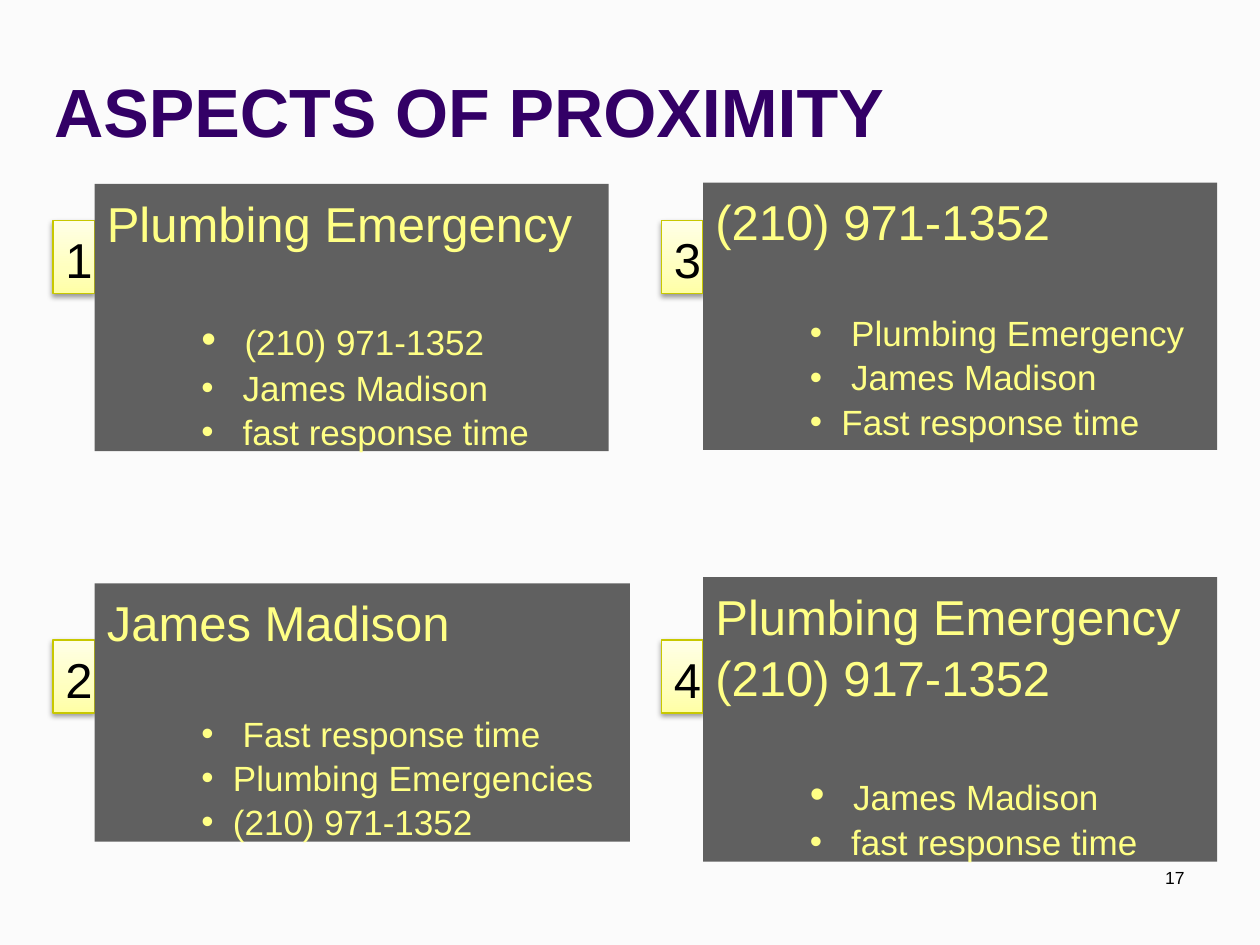
from dataclasses import dataclass

from lxml.etree import SubElement
from pptx import Presentation
from pptx.dml.color import RGBColor as RGB
from pptx.enum.shapes import MSO_SHAPE as SHAPE
from pptx.enum.text import MSO_ANCHOR as ANCHOR, MSO_AUTO_SIZE as FIT, PP_ALIGN as ALIGN
from pptx.oxml.ns import qn
from pptx.util import Inches, Pt


@dataclass(frozen=True)
class Theme:
    font: str = "Arial"
    back: str = "FBFBFB"
    title: str = "330066"
    dark: str = "000000"
    card: str = "606060"
    text: str = "FFFF85"
    edge: str = "C8C800"
    glow: tuple = ((0, "FFFFA5"), (35, "FFFFBF"), (100, "FFFFE7"))
    title_size: int = 39
    head_size: int = 28
    lead_size: int = 24
    item_size: int = 20
    page_size: int = 10
    lines: float = 1.05
    gap: float = 33.8


def add(parent, tag, **attrs):
    return SubElement(parent, qn(tag), {key: str(val) for key, val in attrs.items()})


class Deck:
    def __init__(self, theme):
        self.theme = theme
        self.show = Presentation()
        self.show.slide_width, self.show.slide_height = Inches(10), Inches(7.5)
        self.slide = self.show.slides.add_slide(self.show.slide_layouts[5])
        fill = self.slide.background.fill
        fill.solid()
        fill.fore_color.rgb = RGB.from_string(theme.back)

    def run(self, para, text, size, color, bold=False):
        run = para.add_run()
        run.text = text
        font = run.font
        font.name, font.size, font.bold = self.theme.font, Pt(size), bold
        font.color.rgb = RGB.from_string(color)

    def title(self, text, *box):
        shape = self.slide.shapes.title
        shape.left, shape.top, shape.width, shape.height = map(Inches, box)
        frame = shape.text_frame
        frame.auto_size, frame.vertical_anchor = FIT.NONE, ANCHOR.BOTTOM
        para = frame.paragraphs[0]
        para.alignment = ALIGN.LEFT
        self.run(para, text, self.theme.title_size, self.theme.title, True)

    def rect(self, *box):
        shape = self.slide.shapes.add_shape(SHAPE.RECTANGLE, *map(Inches, box))
        shape.shadow.inherit = False
        frame = shape.text_frame
        frame.word_wrap, frame.vertical_anchor = True, ANCHOR.TOP
        return shape

    def line(self, frame, first=False):
        """Return a left-aligned paragraph, the box's own one if first."""
        para = frame.paragraphs[0] if first else frame.add_paragraph()
        para.alignment, para.line_spacing = ALIGN.LEFT, self.theme.lines
        return para

    def badge(self, text, *box):
        """Add a numbered tag with a soft gradient and a drop shadow."""
        theme = self.theme
        shape = self.rect(*box)
        shape.fill.gradient()
        shape.fill.gradient_angle = 90
        stops = shape._element.spPr.find(".//" + qn("a:gsLst"))
        for old in list(stops):
            stops.remove(old)
        for pos, color in theme.glow:
            add(add(stops, "a:gs", pos=pos * 1000), "a:srgbClr", val=color)
        shape.line.color.rgb = RGB.from_string(theme.edge)
        shape.line.width = Pt(0.75)
        cast = add(shape._element.spPr.find(qn("a:effectLst")), "a:outerShdw",
                   blurRad=Pt(3.1), dist=Pt(1.6), dir=90 * 60000, rotWithShape=0)
        add(add(cast, "a:srgbClr", val=theme.dark), "a:alpha", val=38000)
        self.run(self.line(shape.text_frame, True), text, theme.head_size, theme.dark)

    def card(self, heads, items, wide, *box):
        """Add a panel; wide gives the first item a larger leading space."""
        theme = self.theme
        shape = self.rect(*box)
        shape.fill.solid()
        shape.fill.fore_color.rgb = RGB.from_string(theme.card)
        shape.line.fill.background()
        frame = shape.text_frame
        for num, head in enumerate(heads):
            self.run(self.line(frame, num == 0), head, theme.head_size, theme.text)
        for num, item in enumerate(items):
            para = self.line(frame)
            para.level = 2
            props = para._p.get_or_add_pPr()
            props.set("marL", str(Inches(1)))
            props.set("indent", str(Inches(-0.25)))
            add(props, "a:buFont", typeface=theme.font)
            add(props, "a:buChar", char="•")
            if num == 0:
                para.space_before = Pt(theme.gap)
                if wide:
                    self.run(para, " ", theme.lead_size, theme.text)
            self.run(para, item, theme.item_size, theme.text)

    def page(self, text, *box):
        frame = self.slide.shapes.add_textbox(*map(Inches, box)).text_frame
        frame.word_wrap = True
        para = frame.paragraphs[0]
        para.alignment = ALIGN.RIGHT
        self.run(para, text, self.theme.page_size, self.theme.dark)


CARDS = [
    (["Plumbing Emergency"],
     ["(210) 971-1352", " James Madison", " fast response time"],
     True, 1.46, 4.08, 2.12),
    (["James Madison"],
     [" Fast response time", "Plumbing Emergencies", "(210) 971-1352"],
     False, 4.63, 4.25, 2.05),
    (["(210) 971-1352"],
     [" Plumbing Emergency", " James Madison", "Fast response time"],
     False, 1.45, 4.08, 2.12),
    (["Plumbing Emergency", "(210) 917-1352"],
     ["James Madison", " fast response time"],
     True, 4.58, 4.08, 2.26),
]
COLS, ROWS = (0.42, 5.25), (1.75, 5.08)
TAG = 0.33


def main():
    deck = Deck(Theme())
    deck.title("ASPECTS OF PROXIMITY", 0.33, 0.17, 9.5, 1.08)
    for num, (heads, items, wide, top, width, height) in enumerate(CARDS):
        left = COLS[num // 2]
        deck.badge(str(num + 1), left, ROWS[num % 2], TAG, 0.58)
        deck.card(heads, items, wide, left + TAG, top, width, height)
    deck.page("17", 7.17, 6.83, 2.33, 0.5)
    deck.show.save("out.pptx")


if __name__ == "__main__":
    main()
